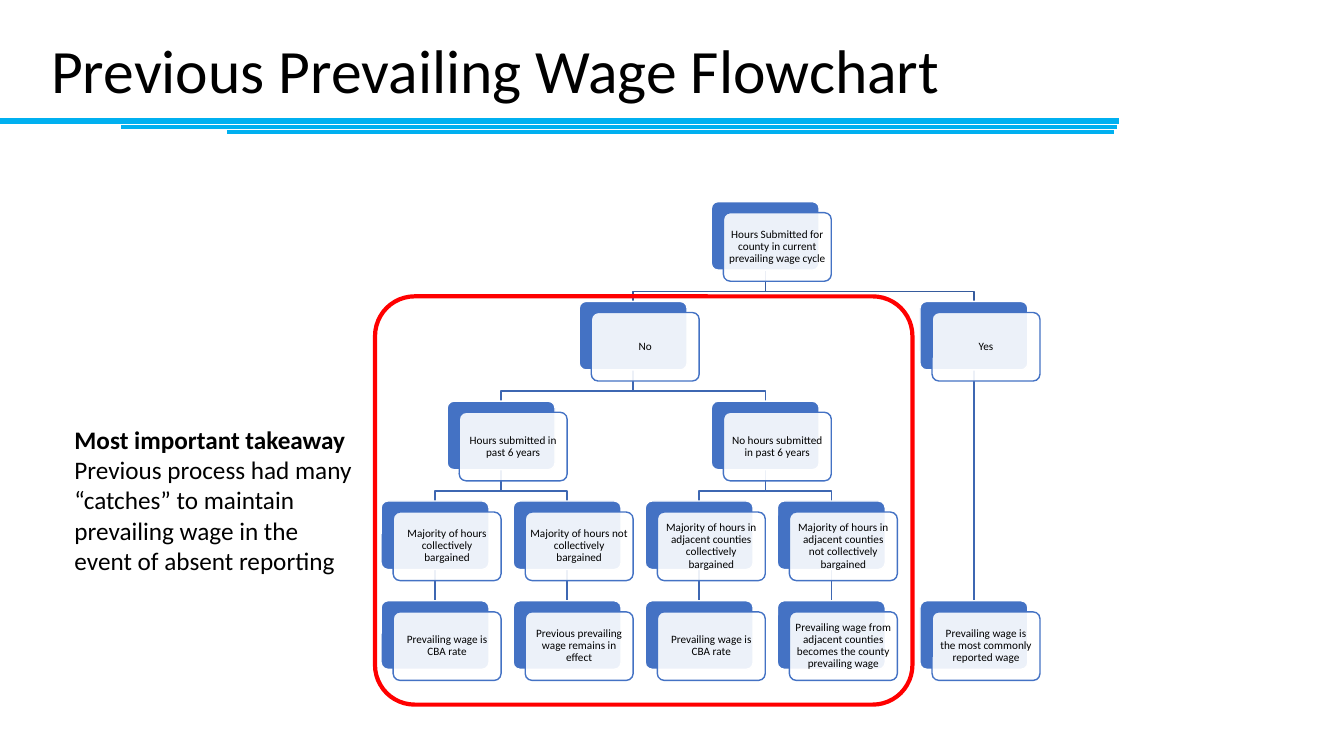
from lxml import etree
from pptx import Presentation
from pptx.dml.color import RGBColor
from pptx.enum.shapes import MSO_CONNECTOR, MSO_SHAPE
from pptx.enum.text import MSO_ANCHOR, PP_ALIGN
from pptx.oxml.ns import qn
from pptx.util import Inches, Pt

ROUND = MSO_SHAPE.ROUNDED_RECTANGLE
STRAIGHT = MSO_CONNECTOR.STRAIGHT
MIDDLE, TOP = MSO_ANCHOR.MIDDLE, MSO_ANCHOR.TOP
LEFT, CENTER = PP_ALIGN.LEFT, PP_ALIGN.CENTER

BLACK = RGBColor(0x00, 0x00, 0x00)
WHITE = RGBColor(0xFF, 0xFF, 0xFF)
CYAN = RGBColor(0x00, 0xB0, 0xF0)
BLUE = RGBColor(0x44, 0x72, 0xC4)
MID = RGBColor(0x3E, 0x67, 0xB2)
DARK = RGBColor(0x36, 0x5B, 0x9D)
RED = RGBColor(0xFF, 0x00, 0x00)

# Content
TITLE = "Previous Prevailing Wage Flowchart"
LEAD = "Most important takeaway "
NOTE = ("Previous process had many “catches” to maintain prevailing wage "
        "in the event of absent reporting")
RULES = [(0, 11.1, 1.2, 4.5), (1.2, 11.08, 1.26, 3), (2.25, 11.05, 1.31, 2.25)]

# Key: (column, row, parent, text)
NODES = {
    "root": (2.5, 0, None, "Hours Submitted for county in current prevailing wage cycle"),
    "no": (1.5, 1, "root", "No"),
    "past": (0.5, 2, "no", "Hours submitted in past 6 years"),
    "cba": (0, 3, "past", "Majority of hours collectively bargained"),
    "cba end": (0, 4, "cba", "Prevailing wage is CBA rate"),
    "non": (1, 3, "past", "Majority of hours not collectively bargained"),
    "non end": (1, 4, "non", "Previous prevailing wage remains in effect"),
    "none": (2.5, 2, "no", "No hours submitted in past 6 years"),
    "near": (2, 3, "none", "Majority of hours in adjacent counties collectively bargained"),
    "near end": (2, 4, "near", "Prevailing wage is CBA rate"),
    "far": (3, 3, "none", "Majority of hours in adjacent counties not collectively bargained"),
    "far end": (3, 4, "far",
                "Prevailing wage from adjacent counties becomes the county prevailing wage"),
    "yes": (4.08, 1, "root", "Yes"),
    "yes end": (4.08, 4, "yes", "Prevailing wage is the most commonly reported wage"),
}

# Grid of the chart, in inches
X0, Y0 = 3.78, 2
COL, ROW = 1.31, 0.99
WIDE, HIGH = 1.07, 0.68
SHIFT_X, SHIFT_Y = 0.12, 0.11
DROP = 0.1

prs = Presentation()
prs.slide_width, prs.slide_height = Inches(13.33), Inches(7.5)
slide = prs.slides.add_slide(prs.slide_layouts[6])
shapes = slide.shapes


def write(shape, runs, size, align=LEFT, anchor=TOP, space=1.0, inset=None):
    frame = shape.text_frame
    frame.word_wrap = True
    frame.vertical_anchor = anchor
    if inset is not None:
        frame.margin_left = frame.margin_right = Inches(inset)
        frame.margin_top = frame.margin_bottom = Inches(inset)
    para = frame.paragraphs[0]
    para.alignment, para.line_spacing = align, space
    for text, bold in runs:
        run = para.add_run()
        run.text = text
        font = run.font
        font.name, font.size, font.bold = "Calibri", Pt(size), bold
        font.color.rgb = BLACK


def line(x1, y1, x2, y2, color, width):
    link = shapes.add_connector(STRAIGHT, *map(Inches, (x1, y1, x2, y2)))
    link.line.color.rgb, link.line.width = color, Pt(width)
    etree.SubElement(link._element.spPr, qn("a:effectLst"))


def elbow(points, color):
    start, *rest = [(Inches(x), Inches(y)) for x, y in points]
    pen = shapes.build_freeform(*start)
    pen.add_line_segments(rest, close=False)
    bend = pen.convert_to_shape()
    bend.shadow.inherit = False
    bend.fill.background()
    bend.line.color.rgb, bend.line.width = color, Pt(1)


def panel(x, y, w, h, round_by, fill, edge, width):
    box = shapes.add_shape(ROUND, *map(Inches, (x, y, w, h)))
    box.adjustments[0] = round_by
    box.shadow.inherit = False
    if fill is None:
        box.fill.background()
    else:
        box.fill.solid()
        box.fill.fore_color.rgb = fill
    box.line.color.rgb, box.line.width = edge, Pt(width)
    return box


def place(key):
    col, row = NODES[key][:2]
    return X0 + col * COL, Y0 + row * ROW


# Header: title and rules
for x1, x2, y, width in RULES:
    line(x1, y, x2, y, CYAN, width)
title = shapes.add_textbox(*map(Inches, (0.41, 0, 10.56, 1.45)))
write(title, [(TITLE, False)], 44, anchor=MIDDLE, space=0.9)

# Links, behind the nodes
for key, (_, _, parent, _) in reversed(NODES.items()):
    if parent is None:
        continue
    x1, y1 = place(parent)
    x2, y2 = place(key)
    x1, x2, y1 = x1 + WIDE / 2, x2 + WIDE / 2, y1 + HIGH
    color = DARK if parent == "root" else MID
    if x1 == x2:
        line(x1, y1, x2, y2, color, 1)
    else:
        elbow([(x1, y1), (x1, y2 - DROP), (x2, y2 - DROP), (x2, y2)], color)

# Nodes: a blue back and a clear card with the text
for key, (_, _, _, text) in NODES.items():
    x, y = place(key)
    panel(x, y, WIDE, HIGH, 0.1, BLUE, WHITE, 1)
    card = panel(x + SHIFT_X, y + SHIFT_Y, WIDE, HIGH, 0.1, WHITE, BLUE, 1)
    tint = card._element.spPr.find(qn("a:solidFill"))[0]
    etree.SubElement(tint, qn("a:alpha"), val="90000")
    write(card, [(text, False)], 8, align=CENTER, anchor=MIDDLE, space=0.9, inset=0.03)

# Takeaway and red frame
note = shapes.add_textbox(*map(Inches, (0.64, 4.16, 2.98, 1.62)))
write(note, [(LEAD, True), (NOTE, False)], 18)
panel(3.72, 2.94, 5.33, 4.05, 0.097, None, RED, 3)

prs.save("out.pptx")
